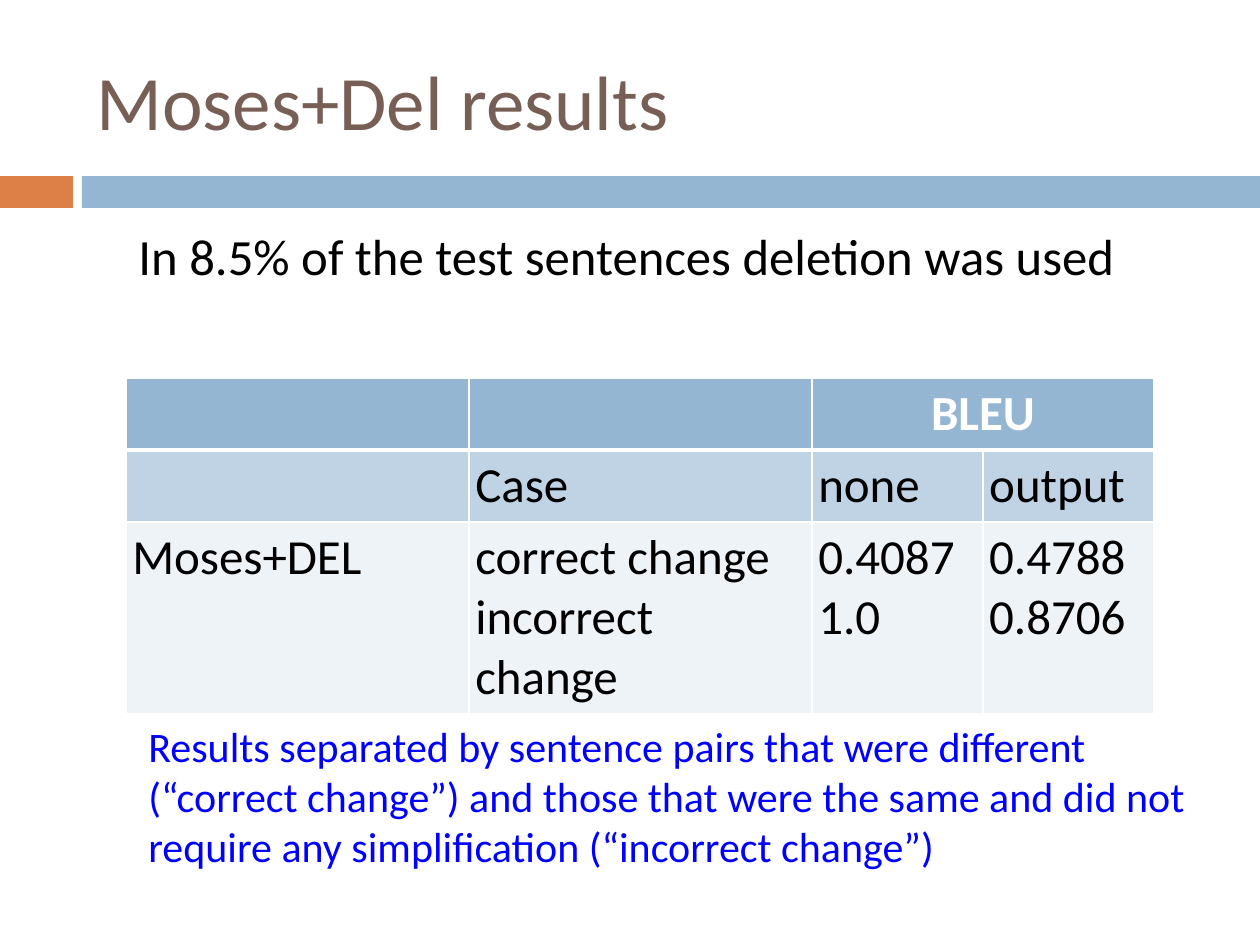
from lxml import etree
from pptx import Presentation, util as u
from pptx.dml.color import RGBColor
from pptx.enum import shapes, text
from pptx.oxml import ns

PX = u.Inches(1) // 126
FONT = "Calibri"
ORANGE = RGBColor(0xDD, 0x80, 0x47)
BLUE = RGBColor(0x94, 0xB6, 0xD2)
LIGHT_BLUE = RGBColor(0xBF, 0xD3, 0xE4)
PALE_BLUE = RGBColor(0xEE, 0xF3, 0xF7)
BROWN = RGBColor(0x77, 0x5F, 0x55)
NOTE_BLUE = RGBColor(0x00, 0x00, 0xFF)
BLACK = RGBColor(0x00, 0x00, 0x00)
WHITE = RGBColor(0xFF, 0xFF, 0xFF)

COLUMN_WIDTHS = [343, 343, 171, 171]
ROW_HEIGHTS = [72, 72, 192]
ROW_FILLS = [BLUE, LIGHT_BLUE, PALE_BLUE]
RESULTS = [
    ["", "", "BLEU", ""],
    ["", "Case", "none", "output"],
    ["Moses+DEL", "correct change\nincorrect change", "0.4087\n1.0", "0.4788\n0.8706"],
]


def place(*lengths):
    """Turn lengths in px into EMU."""
    return [length * PX for length in lengths]


def style_text(frame, size, color, bold=False):
    """Format every run of a text frame alike."""
    for para in frame.paragraphs:
        for span in para.runs:
            span.font.name = FONT
            span.font.size = u.Pt(size)
            span.font.bold = bold
            span.font.color.rgb = color


def add_bar(page, box, color):
    """Add a plain filled rectangle."""
    bar = page.shapes.add_shape(shapes.MSO_SHAPE.RECTANGLE, *place(*box))
    bar.shadow.inherit = False
    bar.fill.solid()
    bar.fill.fore_color.rgb = color
    bar.line.fill.background()


def add_text(page, box, words, size, color, anchor=text.MSO_ANCHOR.TOP):
    """Add a wrapping text box and return its frame."""
    frame = page.shapes.add_textbox(*place(*box)).text_frame
    frame.word_wrap = True
    frame.vertical_anchor = anchor
    frame.text = words
    style_text(frame, size, color)
    return frame


def add_borders(cell, bottom):
    """Draw white borders, with the bottom one of a given width in points."""
    properties = cell._tc.get_or_add_tcPr()
    widths = {"lnL": 1, "lnR": 1, "lnT": 1, "lnB": bottom}
    for position, (side, width) in enumerate(widths.items()):
        line = etree.Element(ns.qn(f"a:{side}"), w=str(u.Pt(width)))
        fill = etree.SubElement(line, ns.qn("a:solidFill"))
        etree.SubElement(fill, ns.qn("a:srgbClr"), val=str(WHITE))
        properties.insert(position, line)


def fill_cell(cell, words, row):
    """Set the words, colours, margins and borders of one cell."""
    header = row == 0
    cell.margin_left = cell.margin_right = u.Inches(0.05)
    cell.margin_top = cell.margin_bottom = u.Inches(0.05)
    cell.fill.solid()
    cell.fill.fore_color.rgb = ROW_FILLS[row]
    cell.text_frame.text = words
    style_text(cell.text_frame, 28, WHITE if header else BLACK, header)
    if header:
        cell.text_frame.paragraphs[0].alignment = text.PP_ALIGN.CENTER
    add_borders(cell, 3 if header else 1)


def add_results(page, left, top):
    """Add the table of BLEU results."""
    box = place(left, top, sum(COLUMN_WIDTHS), sum(ROW_HEIGHTS))
    table = page.shapes.add_table(len(ROW_HEIGHTS), len(COLUMN_WIDTHS), *box).table
    for column, width in zip(table.columns, COLUMN_WIDTHS):
        column.width = width * PX
    for row, height in zip(table.rows, ROW_HEIGHTS):
        row.height = height * PX
    for row, entries in enumerate(RESULTS):
        for column, words in enumerate(entries):
            fill_cell(table.cell(row, column), words, row)
    table.cell(0, 2).merge(table.cell(0, 3))


def main():
    """Build the slide and save it."""
    deck = Presentation()
    deck.slide_width, deck.slide_height = place(1260, 945)
    page = deck.slides.add_slide(deck.slide_layouts[6])
    add_bar(page, (0, 176, 73, 32), ORANGE)
    add_bar(page, (82, 176, 1178, 32), BLUE)
    add_text(page, (84, 32, 1124, 136), "Moses+Del results", 44, BROWN,
             text.MSO_ANCHOR.MIDDLE)
    add_results(page, 126, 378)
    summary = add_text(page, (126, 219, 1077, 149),
                       "In 8.5% of the test sentences deletion was used", 29, BLACK)
    summary.paragraphs[0].space_before = u.Pt(7)
    add_text(page, (136, 714, 1081, 165),
             "Results separated by sentence pairs that were different "
             "(“correct change”) and those that were the same and did not "
             "require any simplification (“incorrect change”)", 24, NOTE_BLUE)
    deck.save("out.pptx")


if __name__ == "__main__":
    main()
